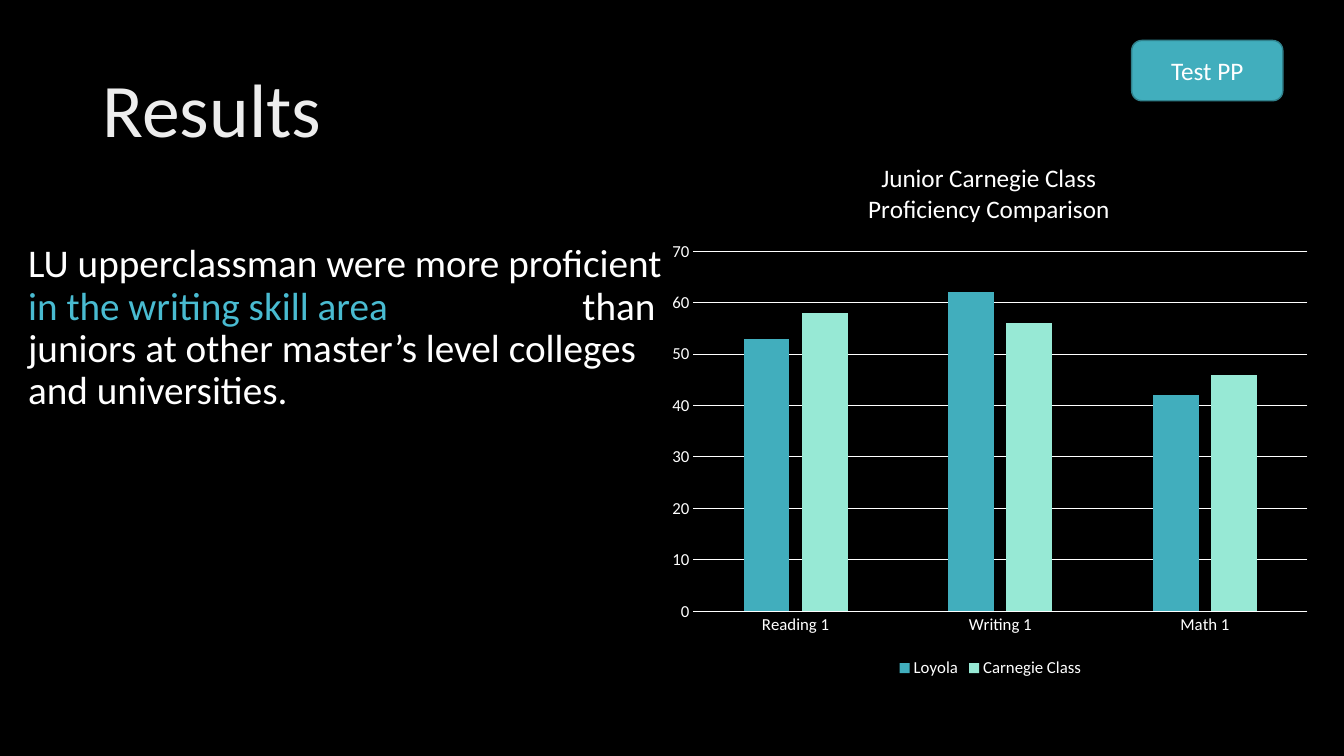
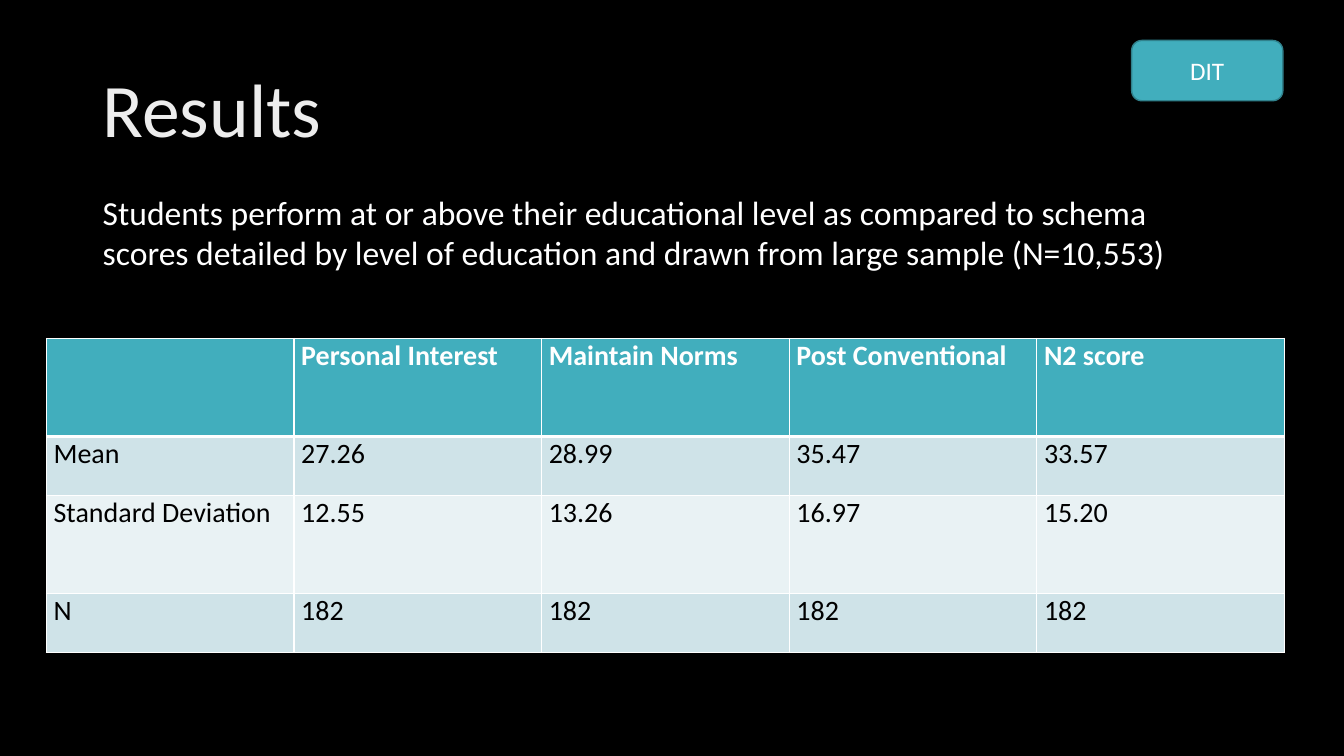
from lxml import etree
from pptx import Presentation
from pptx import util as u
from pptx.chart import data
from pptx.dml.color import RGBColor
from pptx.enum import chart as ch, shapes, text
from pptx.oxml import ns, parse_xml

Cm, Pt = u.Cm, u.Pt
RGB = RGBColor.from_string


class Theme:
    font = "Calibri"
    back, ink, head = "000000", "FFFFFF", "EDEDED"
    teal, edge, mint, glow = "41AEBD", "30818C", "97E9D5", "49BBD1"
    bands = ["CFE3E8", "E9F2F4"]
    title, body, note, cell, label, axis = 54, 28, 24, 20, 18, 12


def style(font, size, color=Theme.ink, bold=False):
    form = {"name": Theme.font, "size": Pt(size), "bold": bold}
    for key, value in form.items():
        setattr(font, key, value)
    font.color.rgb = RGB(color)


def write(frame, runs, size, space=1.0, anchor=text.MSO_ANCHOR.TOP, tab=None):
    """Fill a frame with one paragraph made of (words, color) runs."""
    frame.word_wrap = True
    frame.vertical_anchor = anchor
    para = frame.paragraphs[0]
    para.line_spacing = space
    if tab:
        stops = etree.SubElement(para._p.get_or_add_pPr(), ns.qn("a:tabLst"))
        etree.SubElement(stops, ns.qn("a:tab"), pos=str(tab), algn="l")
    for words, color in runs:
        run = para.add_run()
        run.text = words
        style(run.font, size, color)
    return para


deck = Presentation()
deck.slide_width, deck.slide_height = Cm(33.87), Cm(19.05)
paint = deck.slide_master.background.fill
paint.solid()
paint.fore_color.rgb = RGB(Theme.back)

# Title and badge on both slides
pages = []
for tag in ["Test PP", "DIT"]:
    page = deck.slides.add_slide(deck.slide_layouts[6])
    pages.append(page)
    title = page.shapes.add_textbox(Cm(2.34), Cm(1.02), Cm(29.21), Cm(3.68))
    write(title.text_frame, [("Results", Theme.head)], Theme.title, 0.9,
          text.MSO_ANCHOR.MIDDLE)
    badge = page.shapes.add_shape(shapes.MSO_SHAPE.ROUNDED_RECTANGLE,
                                  Cm(28.52), Cm(1.02), Cm(3.81), Cm(1.52))
    badge.shadow.inherit = False
    badge.fill.solid()
    badge.fill.fore_color.rgb = RGB(Theme.teal)
    badge.line.color.rgb = RGB(Theme.edge)
    badge.line.width = Pt(1)
    para = write(badge.text_frame, [(tag, Theme.ink)], Theme.label,
                 anchor=text.MSO_ANCHOR.MIDDLE)
    para.alignment = text.PP_ALIGN.CENTER
first, second = pages

# Slide 1: finding and chart
body = first.shapes.add_textbox(Cm(0.46), Cm(6.02), Cm(16.71), Cm(12.09))
write(body.text_frame, [
    ("LU upperclassman were more proficient ", Theme.ink),
    ("in the writing skill area\t", Theme.glow),
    ("than juniors at other master’s level colleges and universities.",
     Theme.ink),
], Theme.body, 0.9, tab=Cm(13.97))

scores = data.CategoryChartData()
scores.categories = ["Reading 1", "Writing 1", "Math 1"]
scores.add_series("Loyola", [53, 62, 42])
scores.add_series("Carnegie Class", [58, 56, 46])
chart = first.shapes.add_chart(
    ch.XL_CHART_TYPE.COLUMN_CLUSTERED,
    Cm(16.64), Cm(3.45), Cm(16.64), Cm(13.74), scores).chart
style(chart.font, Theme.axis)

chart.has_title = True
frame = chart.chart_title.text_frame
frame.text = "Junior Carnegie Class\nProficiency Comparison"
for para in frame.paragraphs:
    style(para.runs[0].font, Theme.label)
chart.chart_title.include_in_layout = False

chart.has_legend = True
chart.legend.position = ch.XL_LEGEND_POSITION.BOTTOM
chart.legend.include_in_layout = False
style(chart.legend.font, Theme.axis)

plot = chart.plots[0]
plot.gap_width, plot.overlap, plot.vary_by_categories = 219, -27, False
for series, color in zip(plot.series, [Theme.teal, Theme.mint]):
    series.format.fill.solid()
    series.format.fill.fore_color.rgb = RGB(color)

cats, vals = chart.category_axis, chart.value_axis
for axis in (cats, vals):
    axis.major_tick_mark = ch.XL_TICK_MARK.NONE
    style(axis.tick_labels.font, Theme.axis)
vals.minimum_scale, vals.maximum_scale, vals.major_unit = 0, 70, 10
vals.format.line.fill.background()
for line in (cats.format.line, vals.major_gridlines.format.line):
    line.color.rgb = RGB(Theme.ink)
    line.width = Pt(0.75)

# Fixed places, as shares of the chart's size
area = chart._chartSpace.chart.plotArea
heading = chart.chart_title._element
for owner, place in [
    (area, {"layoutTarget": "inner", "xMode": "edge", "yMode": "edge",
            "x": 0.05, "y": 0.21, "w": 0.93, "h": 0.66}),
    (heading, {"xMode": "edge", "yMode": "edge", "x": 0.31, "y": 0.04}),
]:
    for old in owner.findall(ns.qn("c:layout")):
        owner.remove(old)
    layout = parse_xml(f'<c:layout {ns.nsdecls("c")}><c:manualLayout/></c:layout>')
    for key, value in place.items():
        etree.SubElement(layout[0], ns.qn("c:" + key), val=str(value))
    owner.insert(0 if owner is area else 1, layout)

# Slide 2: summary and table
note = second.shapes.add_textbox(Cm(2.34), Cm(4.7), Cm(28.68), Cm(2.31))
write(note.text_frame, [(
    "Students perform at or above their educational level as compared to "
    "schema scores detailed by level of education and drawn from large "
    "sample (N=10,553)", Theme.ink)], Theme.note)

rows = [
    ["", "Personal Interest", "Maintain Norms", "Post Conventional", "N2 score"],
    ["Mean", "27.26", "28.99", "35.47", "33.57"],
    ["Standard Deviation", "12.55", "13.26", "16.97", "15.20"],
    ["N", "182", "182", "182", "182"],
]
tall, short, wide = Cm(2.47), Cm(1.49), Cm(6.24)
table = second.shapes.add_table(
    len(rows), len(rows[0]), Cm(1.17), Cm(8.53),
    wide * len(rows[0]), 2 * (tall + short)).table
table.first_row = table.horz_banding = False
for col in table.columns:
    col.width = wide
for r, row in enumerate(rows):
    table.rows[r].height = short if r % 2 else tall
    fill = Theme.bands[(r - 1) % 2] if r else Theme.teal
    for c, words in enumerate(row):
        cell = table.cell(r, c)
        cell.margin_left = cell.margin_right = Cm(0.18)
        cell.margin_top = cell.margin_bottom = 0
        cell.fill.solid()
        cell.fill.fore_color.rgb = RGB(fill)
        if words:
            cell.text = words
            style(cell.text_frame.paragraphs[0].runs[0].font, Theme.cell,
                  Theme.back if r else Theme.ink, r == 0)
        for i, side in enumerate("LRTB"):
            thick = (r, side) in [(0, "B"), (1, "T")]
            cell._tc.tcPr.insert(i, parse_xml(
                f'<a:ln{side} {ns.nsdecls("a")} w="{Pt(3 if thick else 1)}">'
                f'<a:solidFill><a:srgbClr val="{Theme.ink}"/></a:solidFill>'
                f'</a:ln{side}>'))

deck.save("out.pptx")
